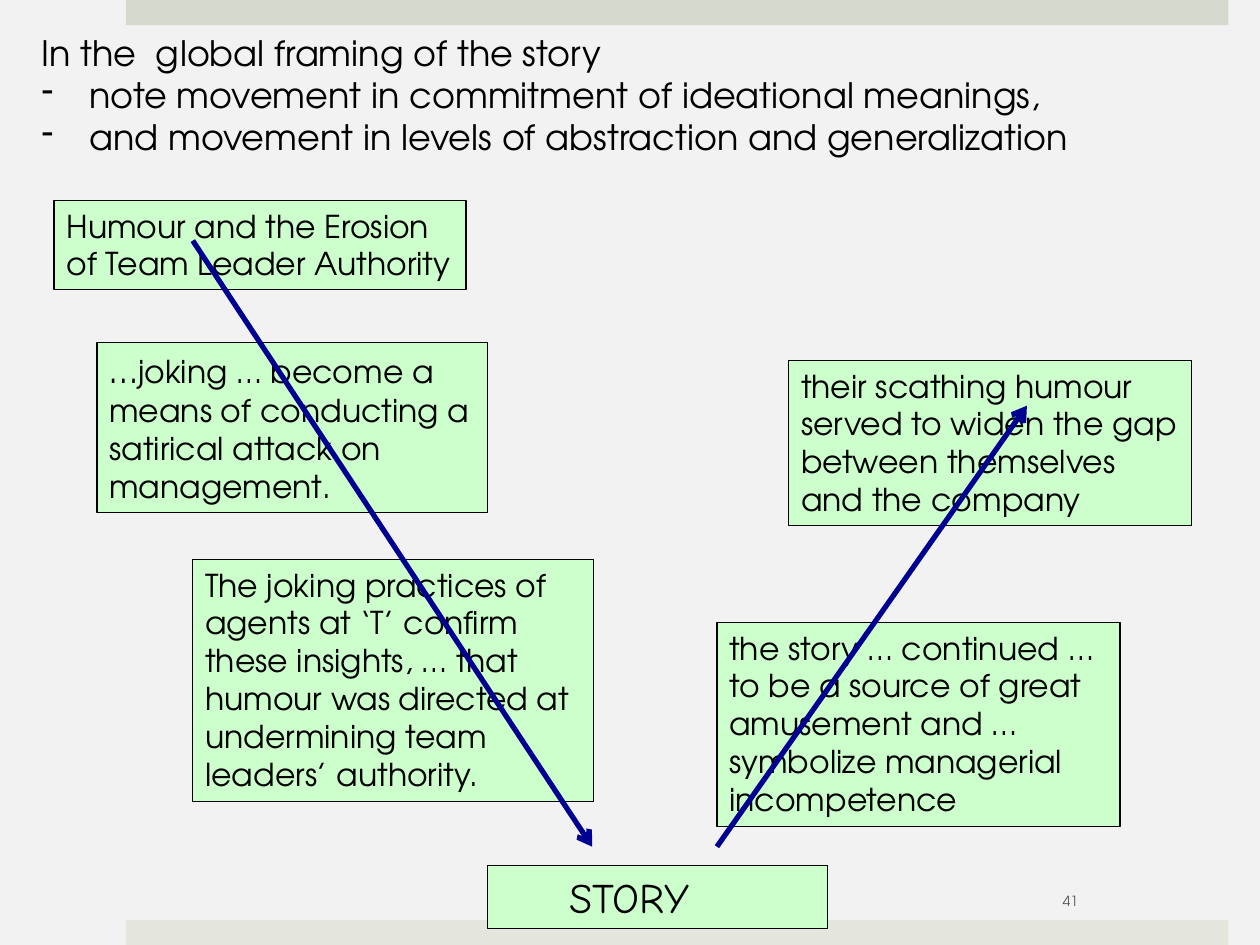
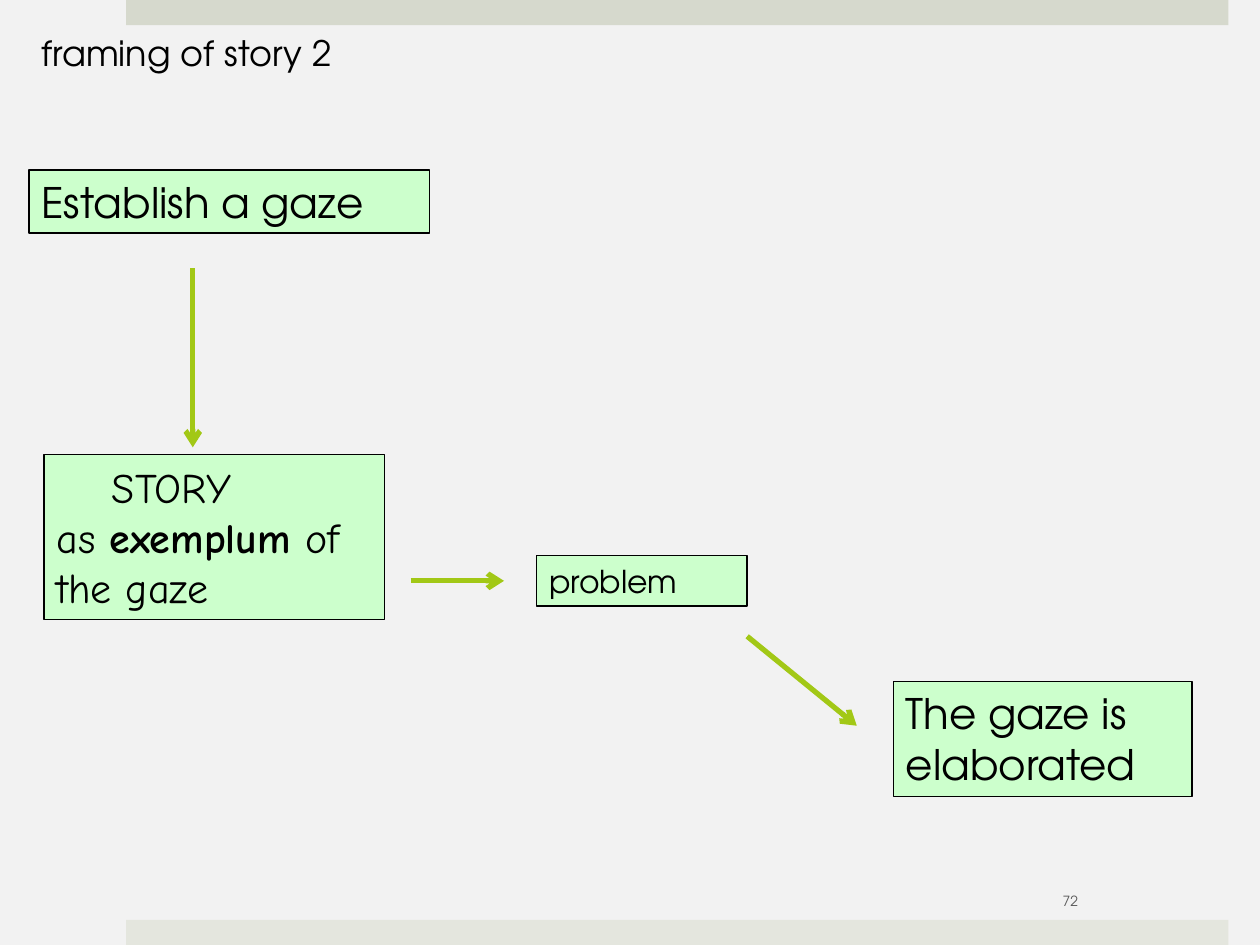
"""Build two slides that frame a story with boxes and arrows."""
import pptx
import pptx.util
import pptx.dml.color
import pptx.enum.shapes
import pptx.enum.text
import pptx.oxml
import pptx.oxml.ns

SANS, COMIC = "TeX Gyre Adventor", "Comic Neue"
BACK, TOP_BAND, LOW_BAND = "F2F2F2", "D6D9CD", "E4E6DE"
GREEN, BLACK, GREY, NAVY, LIME = "CCFFCC", "000000", "595959", "000090", "A2C816"
PT = pptx.util.Pt
COLOUR = pptx.dml.color.RGBColor.from_string
ALIGN, ANCHOR = pptx.enum.text.PP_ALIGN, pptx.enum.text.MSO_ANCHOR

prs = pptx.Presentation()
prs.slide_width, prs.slide_height = pptx.util.Inches(10), pptx.util.Inches(7.5)
COL, ROW = prs.slide_width / 100, prs.slide_height / 75


def write(sp, *paragraphs, size=18, font=SANS, colour=BLACK, align=ALIGN.LEFT,
          anchor=ANCHOR.TOP, indent=0, bullet=None):
    """Fill a shape with paragraphs, each a string or a list of (text, format) runs."""
    tf = sp.text_frame
    tf.word_wrap, tf.vertical_anchor = True, anchor
    tf.auto_size = pptx.enum.text.MSO_AUTO_SIZE.NONE
    for i, runs in enumerate(paragraphs):
        p = tf.add_paragraph() if i else tf.paragraphs[0]
        p.alignment = align
        p.space_before = PT(0)
        pPr = p._p.get_or_add_pPr()
        if i == 0 and indent:
            pPr.set("indent", str(round(indent * COL)))
        if i and bullet:
            pPr.set("marL", str(round(3.8 * COL)))
            pPr.set("indent", str(round(-3.8 * COL)))
            bu = pptx.oxml.parse_xml(f'<a:buChar {pptx.oxml.ns.nsdecls("a")} char="{bullet}"/>')
            pPr.append(bu)
        for text, form in [(runs, {})] if isinstance(runs, str) else runs:
            r = p.add_run()
            r.text = text
            r.font.name, r.font.size = font, PT(form.get("size", size))
            r.font.bold = form.get("bold", False)
            r.font.color.rgb = COLOUR(colour)


def box(s, at, fill=GREEN, line=BLACK):
    """Add a rectangle placed in columns and rows."""
    x, y, w, h = at
    sp = s.shapes.add_shape(pptx.enum.shapes.MSO_SHAPE.RECTANGLE,
                            round(x * COL), round(y * ROW), round(w * COL), round(h * ROW))
    sp.shadow.inherit = False
    sp.fill.solid()
    sp.fill.fore_color.rgb = COLOUR(fill)
    if line:
        sp.line.color.rgb = COLOUR(line)
        sp.line.width = PT(0.75)
    else:
        sp.line.fill.background()
    return sp


slides = [
    dict(
        title=["In the  global framing of the story",
               "note movement in commitment of ideational meanings,",
               "and movement in levels of abstraction and generalization"],
        title_rows=11.1, number="41", arrow=NAVY,
        boxes=[
            ((4.3, 15.9, 32.7, 7.1), ["Humour and the Erosion of Team Leader Authority"], {}),
            ((15.3, 44.4, 31.8, 19.2),
             ["The joking practices of agents at ‘T’ confirm these insights, … that "
              "humour was directed at undermining team leaders’ authority."], {}),
            ((38.7, 68.7, 27, 5), ["STORY"], dict(size=24, font=COMIC, indent=5.5)),
            ((7.7, 27.2, 31, 13.5),
             [[("…", dict(size=20)),
               ("joking … become a means of conducting a satirical attack on management.", {})]],
             {}),
            ((56.9, 49.4, 32, 16.2),
             ["the story … continued … to be a source of great amusement and … "
              "symbolize managerial incompetence"], {}),
            ((62.6, 28.6, 32, 13.1),
             ["their scathing humour served to widen the gap between themselves "
              "and the company"], {}),
        ],
        arrows=[(15.3, 19.1, 47, 67.2), (56.9, 67.2, 81.5, 32.2)],
    ),
    dict(
        title=["framing of story 2"], title_rows=4.4, number="72", arrow=LIME,
        boxes=[
            ((2.3, 13.5, 31.8, 5), ["Establish a gaze"], dict(size=24)),
            ((3.5, 36.1, 27, 13.1),
             ["STORY", [("as ", {}), ("exemplum", dict(bold=True)), (" of the gaze", {})]],
             dict(size=24, font=COMIC, indent=4.4)),
            ((42.6, 44.1, 16.7, 4), ["problem"], {}),
            ((70.9, 54.1, 23.7, 9.1), ["The gaze is elaborated"], dict(size=24)),
        ],
        arrows=[(15.3, 21.3, 15.3, 35.5), (32.6, 46.1, 40, 46.1), (59.3, 50.5, 68, 57.6)],
    ),
]

layout = prs.slide_layouts[5]
layout.background.fill.solid()
layout.background.fill.fore_color.rgb = COLOUR(BACK)

for page in slides:
    s = prs.slides.add_slide(layout)
    for y, fill in ((0, TOP_BAND), (73, LOW_BAND)):
        box(s, (10, y, 87.5, 2), fill, None)

    title = s.shapes.title
    title.left, title.top = round(2.3 * COL), round(2 * ROW)
    title.width, title.height = round(92.3 * COL), round(page["title_rows"] * ROW)
    write(title, *page["title"], size=20, bullet="-")

    number = s.shapes.add_textbox(round(73.3 * COL), round(69.5 * ROW),
                                  round(23.3 * COL), round(4 * ROW))
    write(number, page["number"], size=8, colour=GREY, align=ALIGN.CENTER, anchor=ANCHOR.MIDDLE)

    for at, paragraphs, form in page["boxes"]:
        write(box(s, at), *paragraphs, **form)

    for x1, y1, x2, y2 in page["arrows"]:
        line = s.shapes.add_connector(pptx.enum.shapes.MSO_CONNECTOR.STRAIGHT,
                                      round(x1 * COL), round(y1 * ROW),
                                      round(x2 * COL), round(y2 * ROW))
        line.line.color.rgb = COLOUR(page["arrow"])
        line.line.width = PT(3)
        ns = pptx.oxml.ns.nsdecls("a")
        line.line._get_or_add_ln().append(pptx.oxml.parse_xml(f'<a:tailEnd {ns} type="arrow"/>'))
        line._element.spPr.append(pptx.oxml.parse_xml(f"<a:effectLst {ns}/>"))

prs.save("out.pptx")
